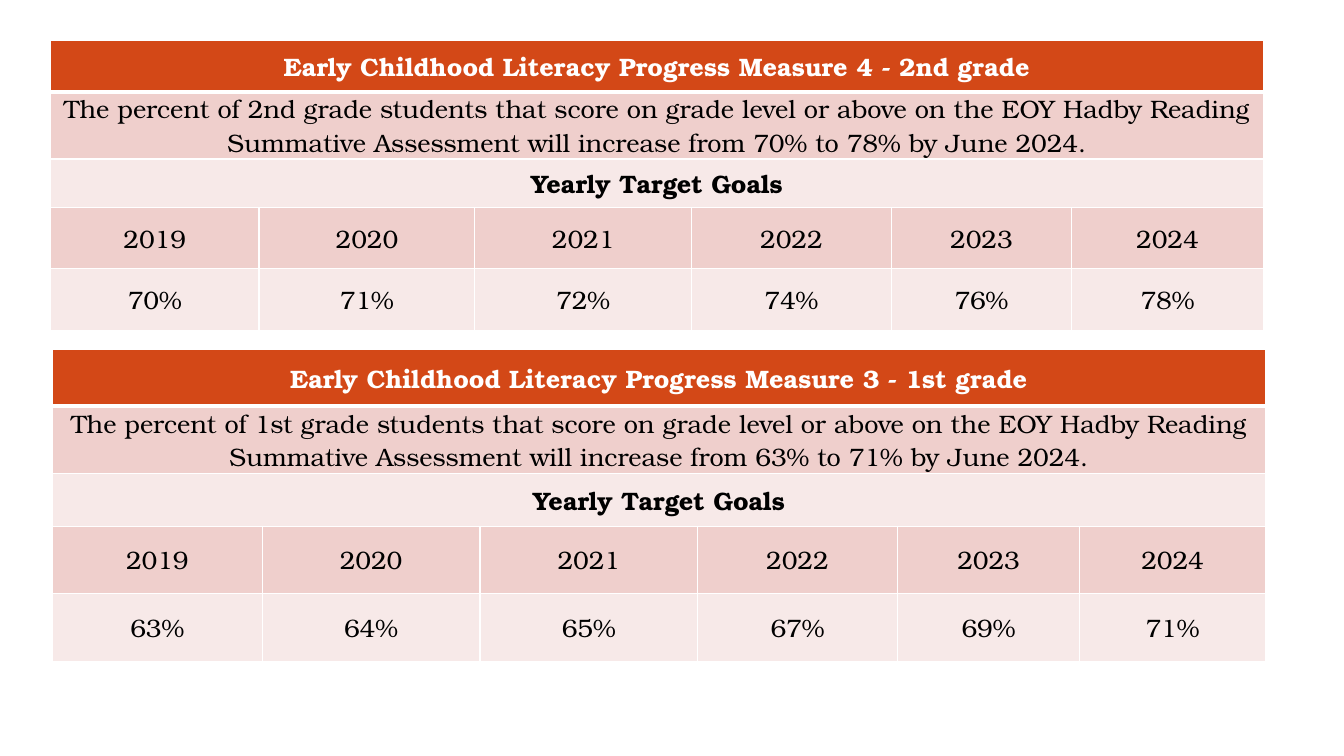
from lxml.etree import SubElement
from pptx import Presentation
from pptx.dml.color import RGBColor
from pptx.enum.text import MSO_ANCHOR, PP_ALIGN
from pptx.oxml.ns import qn
from pptx.util import Inches, Pt

YEARS = ["2019", "2020", "2021", "2022", "2023", "2024"]
WHITE, BLACK = "FFFFFF", "000000"
HEAD, DARK, LIGHT = "D34817", "EFCFCC", "F7E9E8"
FILLS = [HEAD, DARK, LIGHT, DARK, LIGHT]


def tint(code):
    return RGBColor.from_string(code)


def write(frame, text, font, size=18, color=BLACK, bold=False):
    para = frame.paragraphs[0]
    para.alignment = PP_ALIGN.CENTER
    run = para.add_run()
    run.text = text
    run.font.name = font
    run.font.size = Pt(size)
    run.font.bold = bold
    run.font.color.rgb = tint(color)


class Deck:
    def __init__(self, font):
        self.font = font
        self.show = Presentation()
        self.show.slide_width = Inches(13.33)
        self.show.slide_height = Inches(7.5)
        self.slide = self.show.slides.add_slide(self.show.slide_layouts[6])

    def edge(self, cell, side, width):
        line = SubElement(cell._tc.get_or_add_tcPr(), qn("a:ln" + side),
                          w=str(Pt(width)))
        fill = SubElement(line, qn("a:solidFill"))
        SubElement(fill, qn("a:srgbClr"), val=WHITE)

    def cell(self, cell, row):
        cell.margin_left = cell.margin_right = 0
        cell.margin_top = cell.margin_bottom = 0
        cell.vertical_anchor = MSO_ANCHOR.MIDDLE
        # A thicker rule parts the header from the body
        self.edge(cell, "L", 1)
        self.edge(cell, "R", 1)
        self.edge(cell, "T", 3 if row == 1 else 1)
        self.edge(cell, "B", 3 if row == 0 else 1)
        cell.fill.solid()
        cell.fill.fore_color.rgb = tint(FILLS[row])

    def table(self, left, top, cols, rows, lines):
        frame = self.slide.shapes.add_table(
            len(rows), len(cols), Inches(left), Inches(top),
            Inches(sum(cols)), Inches(sum(rows)))
        table = frame.table
        for col, width in zip(table.columns, cols):
            col.width = Inches(width)
        for row, height in zip(table.rows, rows):
            row.height = Inches(height)
        for i, texts in enumerate(lines):
            for j in range(len(cols)):
                self.cell(table.cell(i, j), i)
            # A single text spans the whole row
            if len(texts) == 1:
                table.cell(i, 0).merge(table.cell(i, len(cols) - 1))
            for j, text in enumerate(texts):
                write(table.cell(i, j).text_frame, text, self.font,
                      color=WHITE if i == 0 else BLACK, bold=i in (0, 2))

    def goals(self, left, top, cols, rows, number, grade, rates):
        self.table(left, top, cols, rows, [
            [f"Early Childhood Literacy Progress Measure {number} - {grade} grade"],
            [f"The percent of {grade} grade students that score on grade level "
             "or above on the EOY Hadby Reading Summative Assessment will "
             f"increase from {rates[0]}% to {rates[-1]}% by June 2024."],
            ["Yearly Target Goals"],
            YEARS,
            [f"{rate}%" for rate in rates],
        ])


def main():
    deck = Deck("TeX Gyre Bonum")
    # Second grade goals
    deck.goals(0.5, 0.4, [2.07, 2.14, 2.15, 1.98, 1.79, 1.9],
               [0.51, 0.61, 0.48, 0.61, 0.61],
               4, "2nd", [70, 71, 72, 74, 76, 78])
    # First grade goals
    deck.goals(0.52, 3.47, [2.08, 2.16, 2.16, 1.98, 1.81, 1.84],
               [0.56, 0.67, 0.52, 0.67, 0.67],
               3, "1st", [63, 64, 65, 67, 69, 71])
    deck.show.save("out.pptx")


if __name__ == "__main__":
    main()
